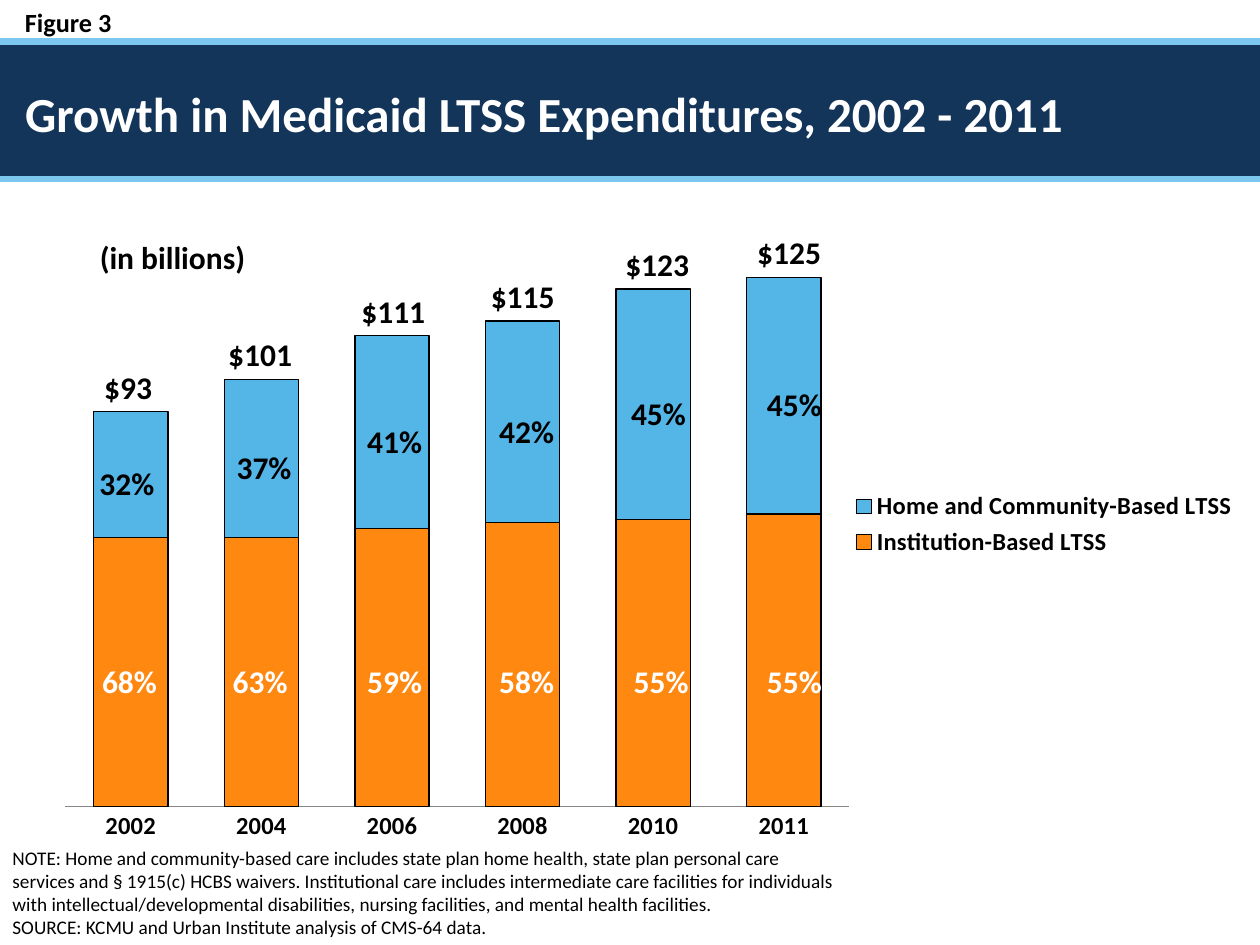
from lxml import etree
from pptx import Presentation
from pptx.chart.data import CategoryChartData
from pptx.dml.color import RGBColor
from pptx.enum.chart import XL_CHART_TYPE, XL_LEGEND_POSITION, XL_TICK_MARK
from pptx.enum.shapes import MSO_CONNECTOR, MSO_SHAPE
from pptx.enum.text import MSO_ANCHOR, PP_ALIGN
from pptx.oxml.ns import qn
from pptx.util import Inches, Pt

STACKED = XL_CHART_TYPE.COLUMN_STACKED
LEGEND_RIGHT = XL_LEGEND_POSITION.RIGHT
NO_TICK = XL_TICK_MARK.NONE
STRAIGHT = MSO_CONNECTOR.STRAIGHT
RECTANGLE = MSO_SHAPE.RECTANGLE
TOP, MIDDLE, BOTTOM = MSO_ANCHOR.TOP, MSO_ANCHOR.MIDDLE, MSO_ANCHOR.BOTTOM
LEFT, CENTER = PP_ALIGN.LEFT, PP_ALIGN.CENTER

BLACK = RGBColor(0x00, 0x00, 0x00)
WHITE = RGBColor(0xFF, 0xFF, 0xFF)
NAVY = RGBColor(0x13, 0x35, 0x59)
PALE_BLUE = RGBColor(0x7B, 0xC7, 0xED)
ORANGE = RGBColor(0xFF, 0x88, 0x11)
SKY = RGBColor(0x54, 0xB5, 0xE7)
GREY = RGBColor(0x86, 0x86, 0x86)
FONT = "Calibri"

WIDTH, HEIGHT = 10, 7.5
AXIS_MAX = 200
PLOT = (0.52, 1.76, 6.22, 4.64)
LEGEND = (6.76, 3.86, 3.06, 0.6)
LABEL_WIDTH, LABEL_HEIGHT = 0.9, 0.4
INSTITUTION_LEVEL = 43
HOME_DROP = 3

YEARS = ["2002", "2004", "2006", "2008", "2010", "2011"]
INSTITUTION = [92, 92, 95, 97, 98, 100]
HOME = [43, 54, 66, 69, 79, 81]
TOTAL_LABELS = ["$93", "$101", "$111", "$115", "$123", "$125"]
HOME_LABELS = ["32%", "37%", "41%", "42%", "45%", "45%"]
INSTITUTION_LABELS = ["68%", "63%", "59%", "58%", "55%", "55%"]
TOTAL_COLUMNS = [0.48, 1.49, 2.51, 3.5, 4.53, 5.54]
HOME_COLUMNS = [0.47, 1.52, 2.52, 3.53, 4.54, 5.58]
INSTITUTION_COLUMNS = [0.49, 1.49, 2.52, 3.53, 4.56, 5.58]

NOTES = [
    "NOTE: Home and community-based care includes state plan home health, "
    "state plan personal care services and § 1915(c) HCBS waivers. "
    "Institutional care includes intermediate care facilities for individuals "
    "with intellectual/developmental disabilities, nursing facilities, and "
    "mental health facilities.",
    "SOURCE: KCMU and Urban Institute analysis of CMS-64 data.",
]


def style_font(font, size, color=BLACK, bold=True):
    font.name = FONT
    font.size = Pt(size)
    font.bold = bold
    font.color.rgb = color


def write(frame, lines, size, color=BLACK, bold=True, align=LEFT, anchor=TOP):
    frame.word_wrap = True
    frame.vertical_anchor = anchor
    for index, line in enumerate(lines):
        paragraph = frame.add_paragraph() if index else frame.paragraphs[0]
        paragraph.alignment = align
        paragraph.space_before = Pt(0)
        run = paragraph.add_run()
        run.text = line
        style_font(run.font, size, color, bold)


def add_text(slide, box, lines, size, **style):
    holder = slide.shapes.add_textbox(*map(Inches, box))
    write(holder.text_frame, lines, size, **style)


def add_header(slide, box):
    left, top, width, height = box
    band = slide.shapes.add_shape(RECTANGLE, *map(Inches, box))
    band.shadow.inherit = False
    band.fill.solid()
    band.fill.fore_color.rgb = NAVY
    band.line.fill.background()
    for y in (top, top + height):
        rule = slide.shapes.add_connector(
            STRAIGHT, *map(Inches, (left, y, left + width, y)))
        rule.line.color.rgb = PALE_BLUE
        rule.line.width = Pt(3.7)
        etree.SubElement(rule._element.spPr, qn("a:effectLst"))

    title = slide.shapes.title
    margin = 0.01 * width
    title.left, title.top = Inches(left + margin), Inches(top + 0.07)
    title.width, title.height = Inches(width - 2 * margin), Inches(1)
    write(title.text_frame, ["Growth in Medicaid LTSS Expenditures, 2002 - 2011"],
          28, color=WHITE, anchor=MIDDLE)
    slide.shapes._spTree.append(title._element)


def set_layout(element, box, frame, inner=False):
    for old in element.findall(qn("c:layout")):
        element.remove(old)
    layout = etree.Element(qn("c:layout"))
    manual = etree.SubElement(layout, qn("c:manualLayout"))
    shares = [(box[0] - frame[0]) / frame[2], (box[1] - frame[1]) / frame[3],
              box[2] / frame[2], box[3] / frame[3]]
    settings = [("layoutTarget", "inner")] if inner else []
    settings += [("xMode", "edge"), ("yMode", "edge")]
    settings += [(key, f"{share:.4f}") for key, share in zip("xywh", shares)]
    for key, value in settings:
        etree.SubElement(manual, qn("c:" + key)).set("val", value)
    if inner:
        element.insert(0, layout)
    else:
        element.find(qn("c:legendPos")).addnext(layout)


def add_spending_chart(slide, box):
    data = CategoryChartData(number_format="0")
    data.categories = YEARS
    data.add_series("Institution-Based LTSS", INSTITUTION)
    data.add_series("Home and Community-Based LTSS", HOME)
    chart = slide.shapes.add_chart(STACKED, *map(Inches, box), data).chart
    style_font(chart.font, 10, bold=False)
    chart.has_title = False

    columns = chart.plots[0]
    columns.gap_width, columns.overlap = 76, 100
    columns.vary_by_categories = False
    for series, color in zip(columns.series, (ORANGE, SKY)):
        series.format.fill.solid()
        series.format.fill.fore_color.rgb = color
        series.format.line.color.rgb = BLACK
        series.format.line.width = Pt(0.75)

    years = chart.category_axis
    years.major_tick_mark = NO_TICK
    years.format.line.color.rgb = GREY
    style_font(years.tick_labels.font, 14)
    amounts = chart.value_axis
    amounts.minimum_scale, amounts.maximum_scale = 0, AXIS_MAX
    amounts.has_major_gridlines = False
    amounts.visible = False

    chart.has_legend = True
    chart.legend.position = LEGEND_RIGHT
    chart.legend.include_in_layout = False
    style_font(chart.legend.font, 14)
    set_layout(chart._chartSpace.chart.plotArea, PLOT, box, inner=True)
    set_layout(chart.legend._element, LEGEND, box)


def add_column_labels(slide, plot):
    left, top, width, height = plot
    column = width / len(YEARS)
    half = LABEL_HEIGHT / 2 * AXIS_MAX / height
    totals = [a + b + half for a, b in zip(INSTITUTION, HOME)]
    middles = [a + b / 2 - HOME_DROP for a, b in zip(INSTITUTION, HOME)]
    bases = [INSTITUTION_LEVEL] * len(YEARS)
    rows = [(TOTAL_LABELS, TOTAL_COLUMNS, totals, BLACK),
            (HOME_LABELS, HOME_COLUMNS, middles, BLACK),
            (INSTITUTION_LABELS, INSTITUTION_COLUMNS, bases, WHITE)]
    for labels, positions, levels, color in rows:
        for label, position, level in zip(labels, positions, levels):
            x = left + position * column - LABEL_WIDTH / 2
            y = top + height * (1 - level / AXIS_MAX) - LABEL_HEIGHT / 2
            add_text(slide, (x, y, LABEL_WIDTH, LABEL_HEIGHT), [label], 18,
                     color=color, align=CENTER)


def main():
    deck = Presentation()
    deck.slide_width, deck.slide_height = Inches(WIDTH), Inches(HEIGHT)
    slide = deck.slides.add_slide(deck.slide_layouts[5])
    add_text(slide, (0.01 * WIDTH, 0, 0.98 * WIDTH, 0.35), ["Figure 3"], 15)
    add_header(slide, (0, 0.33, WIDTH, 1.09))
    add_spending_chart(slide, (0.32, 1.58, 9.8, 5.2))
    add_column_labels(slide, PLOT)
    add_text(slide, (0.69, 1.84, 1.36, LABEL_HEIGHT), ["(in billions)"], 18,
             align=CENTER)
    add_text(slide, (0, 6.8, 6.75, 0.7), NOTES, 11, bold=False, anchor=BOTTOM)
    deck.save("out.pptx")


if __name__ == "__main__":
    main()
